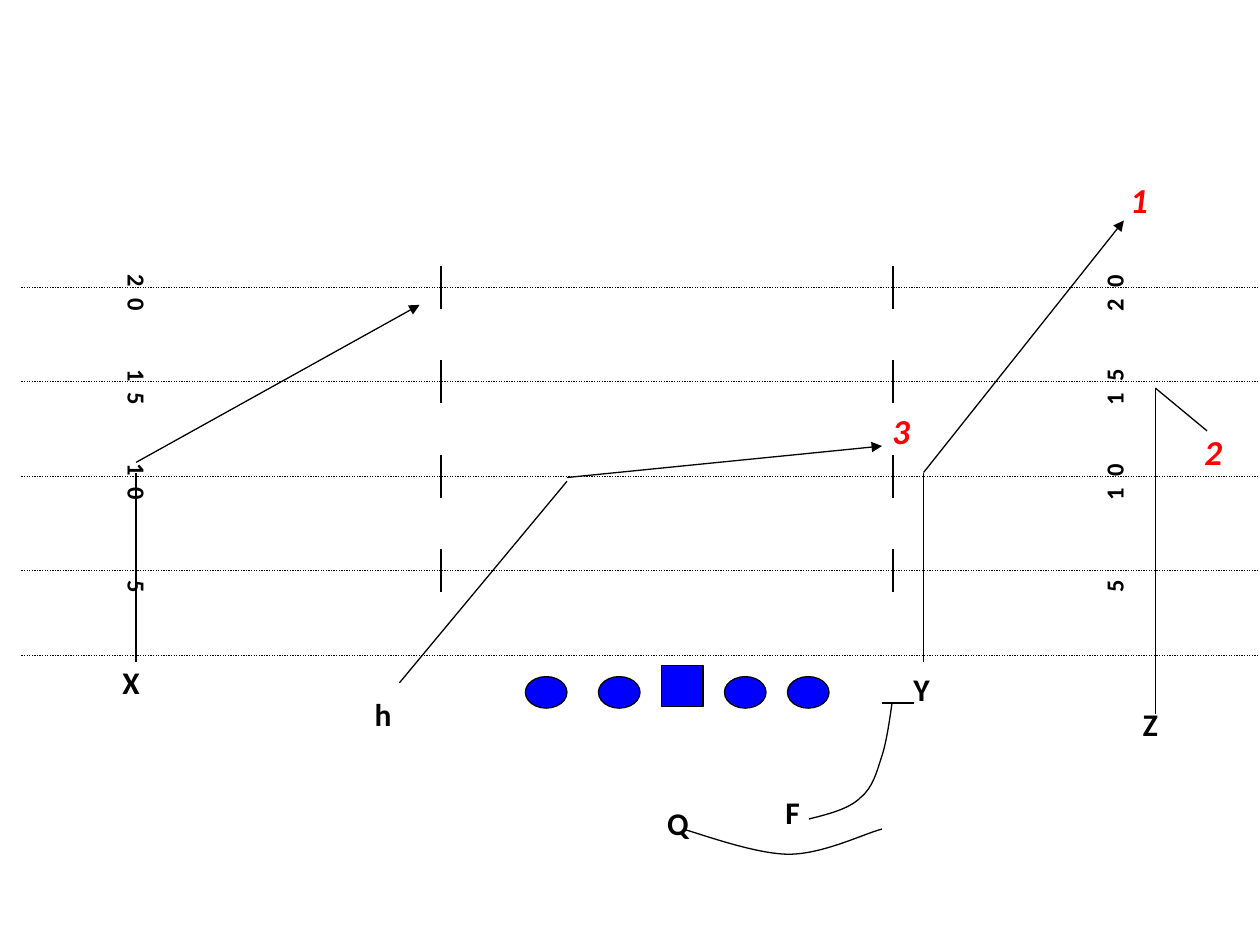
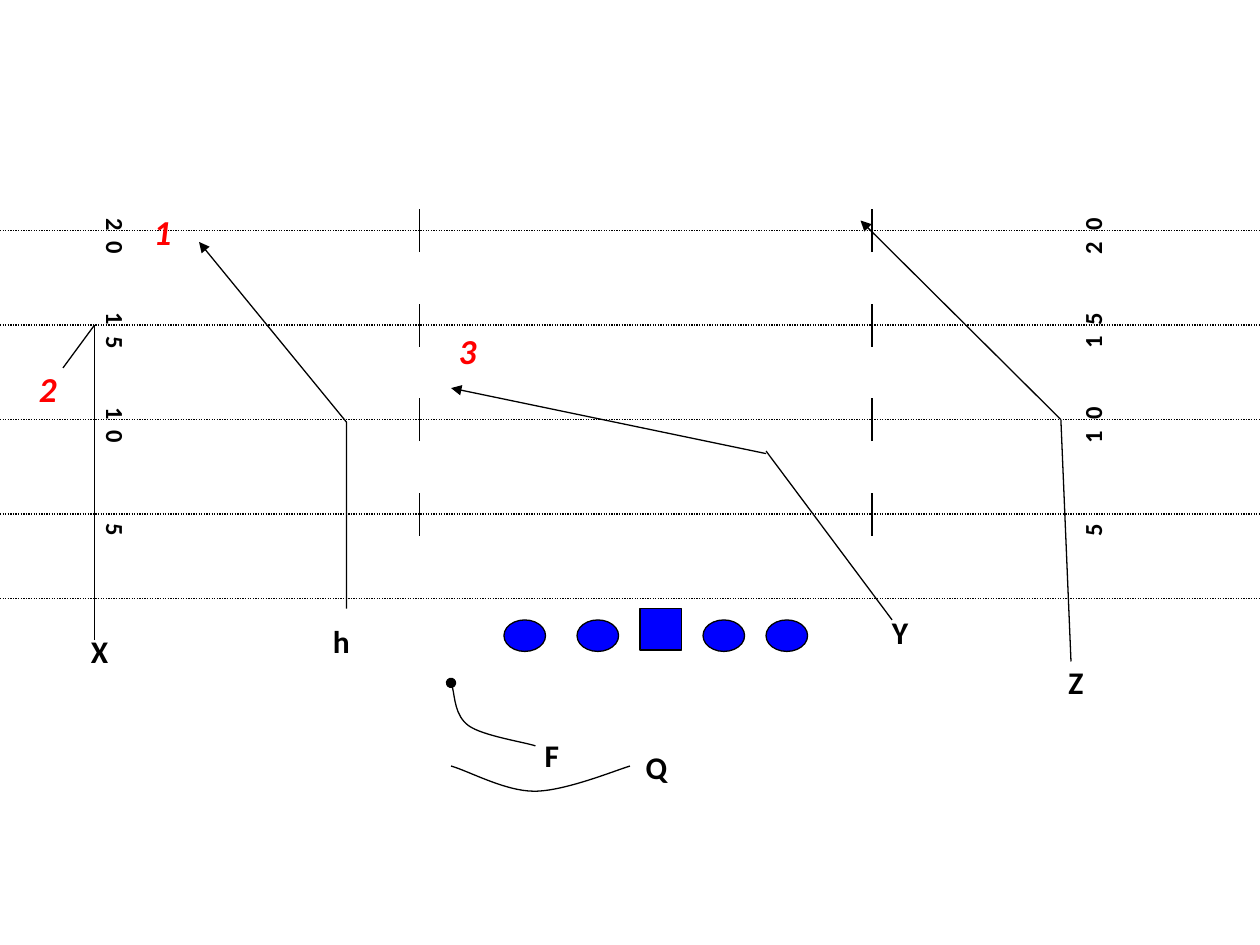
from pptx import Presentation
from pptx.dml.color import RGBColor
from pptx.enum.dml import MSO_LINE
from pptx.enum.shapes import MSO_CONNECTOR, MSO_SHAPE
from pptx.enum.text import MSO_ANCHOR, MSO_AUTO_SIZE, PP_ALIGN
from pptx.oxml.ns import qn
from pptx.util import Inches, Pt
from lxml.etree import SubElement

FONT = "Calibri"
BLACK, BLUE, RED = "000000", "0000FF", "FF0000"
LABEL_WIDTH, LABEL_HEIGHT = 0.42, 0.33
TICK_HALF = 0.17

# Field layout, measured from the left end of the field and the scrimmage line.
YARD_LINES = {"5": -0.67, "1 0": -1.42, "1 5": -2.17, "2 0": -2.92}
HASH_COLUMNS = (3.33, 6.92)
NUMBER_COLUMNS = ((0.71, 90), (8.46, 270))
LINEMEN = (4, 4.58, 5.58, 6.08)
CENTER = 5.08


def color(hex_string):
    return RGBColor.from_string(hex_string)


def write(text_frame, text, size=18, hex_color=BLACK, italic=False,
          align=PP_ALIGN.CENTER, spacing=0):
    """Write one bold line; spacing is extra letter spacing in hundredths of a point."""
    text_frame.word_wrap = False
    paragraph = text_frame.paragraphs[0]
    paragraph.alignment = align
    run = paragraph.add_run()
    run.text = text
    run.font.name = FONT
    run.font.size = Pt(size)
    run.font.bold = True
    run.font.italic = italic
    run.font.color.rgb = color(hex_color)
    if spacing:
        run._r.get_or_add_rPr().set("spc", str(spacing))


class PlayDiagram:
    """Draws one play on a blank slide; the field starts at left, scrimmage is its line."""

    def __init__(self, presentation, left, scrimmage):
        self.slide = presentation.slides.add_slide(presentation.slide_layouts[6])
        self.shapes = self.slide.shapes
        self.left = left
        self.scrimmage = scrimmage

    def stroke(self, shape, width=0.75, dash=None, end=None):
        """Style an outline; end names the mark at its last point."""
        shape.line.color.rgb = color(BLACK)
        shape.line.width = Pt(width)
        if dash:
            shape.line.dash_style = dash
        if end:
            SubElement(shape.line._get_or_add_ln(), qn("a:tailEnd"), type=end)

    def line(self, start, finish, **style):
        connector = self.shapes.add_connector(
            MSO_CONNECTOR.STRAIGHT, *map(Inches, (*start, *finish)))
        self.stroke(connector, **style)
        SubElement(connector._element.spPr, qn("a:effectLst"))

    def route(self, *points, end=None):
        """Join the points with straight lines and mark the last one."""
        last = len(points) - 2
        for index, (start, finish) in enumerate(zip(points, points[1:])):
            self.line(start, finish, end=end if index == last else None)

    def outline(self, *points, curved=False, end=None):
        """Draw an open path; if curved, each three points after the first form a Bézier."""
        start, *others = [tuple(map(Inches, point)) for point in points]
        builder = self.shapes.build_freeform(*start)
        builder.add_line_segments(others, close=False)
        shape = builder.convert_to_shape()
        shape.shadow.inherit = False
        shape.fill.background()
        self.stroke(shape, end=end)
        if curved:
            segments = list(shape._element.iter(qn("a:lnTo")))
            for index in range(0, len(segments), 3):
                curve = SubElement(segments[index].getparent(), qn("a:cubicBezTo"))
                for segment in segments[index:index + 3]:
                    curve.append(segment[0])
                    segment.getparent().remove(segment)

    def player(self, kind, left, top, height):
        shape = self.shapes.add_shape(
            kind, *map(Inches, (left, top, 0.33, height)))
        shape.shadow.inherit = False
        shape.fill.solid()
        shape.fill.fore_color.rgb = color(BLUE)
        self.stroke(shape)

    def label(self, text, left, top, rotation=0, **text_format):
        shape = self.shapes.add_shape(
            MSO_SHAPE.OVAL, *map(Inches, (left, top, LABEL_WIDTH, LABEL_HEIGHT)))
        shape.shadow.inherit = False
        shape.fill.background()
        shape.line.fill.background()
        shape.rotation = rotation
        shape.text_frame.vertical_anchor = MSO_ANCHOR.MIDDLE
        write(shape.text_frame, text, **text_format)

    def tight_end(self, left, top):
        box = self.shapes.add_textbox(*map(Inches, (left, top, 0.37, 0.4)))
        write(box.text_frame, "Y", align=PP_ALIGN.LEFT)
        box.text_frame.auto_size = MSO_AUTO_SIZE.SHAPE_TO_FIT_TEXT

    def reads(self, *places):
        """Number the quarterback's reads in order."""
        for number, place in enumerate(places, start=1):
            self.label(str(number), *place, size=20, hex_color=RED, italic=True)

    def offensive_line(self):
        for offset in LINEMEN:
            self.player(MSO_SHAPE.OVAL, self.left + offset, self.scrimmage + 0.17, 0.25)
        self.player(MSO_SHAPE.RECTANGLE, self.left + CENTER, self.scrimmage + 0.08, 0.33)

    def field(self):
        for offset in (0, *YARD_LINES.values()):
            y = self.scrimmage + offset
            self.line((self.left, y), (self.left + 10, y), dash=MSO_LINE.ROUND_DOT)
        for yards, offset in YARD_LINES.items():
            y = self.scrimmage + offset
            single = len(yards) == 1
            for column, rotation in NUMBER_COLUMNS:
                self.label(yards, self.left + column, y - (0.04 if single else 0.12),
                           rotation, size=14, spacing=0 if single else 160)
            for column in HASH_COLUMNS:
                x = self.left + column
                self.line((x, y + TICK_HALF), (x, y - TICK_HALF), width=1)

    def formation(self, players, tight_end):
        self.offensive_line()
        self.field()
        for name, place in players.items():
            self.label(name, *place)
        self.tight_end(*tight_end)


def draw_right_play(presentation):
    play = PlayDiagram(presentation, left=0.17, scrimmage=5.2)
    play.formation({"X": (0.83, 5.25), "F": (6.08, 6.28), "h": (2.83, 5.5),
                    "Q": (5.17, 6.37), "Z": (8.92, 5.58)}, tight_end=(7.15, 5.27))
    play.line((1.08, 5.25), (1.08, 3.75))
    play.line((1.08, 3.67), (3.33, 2.42), end="triangle")
    play.line((3.17, 5.42), (4.5, 3.82))
    play.line((4.5, 3.79), (7, 3.54), end="triangle")
    play.route((7.33, 5.25), (7.33, 3.75), (8.92, 1.75), end="triangle")
    play.route((9.17, 5.67), (9.17, 3.08), (9.58, 3.42))
    play.outline((6.42, 6.5), (6.58, 6.46), (6.74, 6.42), (6.83, 6.33),
                 (6.93, 6.25), (6.96, 6.12), (7, 6),
                 (7.04, 5.88), (7.07, 5.65), (7.08, 5.58), curved=True)
    play.line((7, 5.58), (7.25, 5.58))
    play.outline((5.42, 6.58), (5.56, 6.62), (6, 6.78), (6.26, 6.78),
                 (6.53, 6.78), (6.85, 6.62), (7, 6.58), curved=True)
    play.reads((8.83, 1.42), (9.42, 3.42), (6.94, 3.25))


def draw_left_play(presentation):
    play = PlayDiagram(presentation, left=0, scrimmage=4.75)
    play.formation({"h": (2.5, 4.92), "F": (4.17, 5.83), "X": (0.58, 5),
                    "Q": (5, 5.92), "Z": (8.33, 5.25)}, tight_end=(6.98, 4.82))
    play.outline((2.75, 4.83), (2.75, 3.35), (1.58, 1.92), end="triangle")
    play.outline((4.25, 5.92), (4.16, 5.89), (3.83, 5.84), (3.72, 5.76),
                 (3.61, 5.68), (3.61, 5.49), (3.58, 5.42), curved=True, end="oval")
    play.outline((5, 6.08), (4.87, 6.12), (4.48, 6.28), (4.24, 6.28),
                 (4.01, 6.28), (3.72, 6.12), (3.58, 6.08), curved=True)
    play.route((8.5, 5.25), (8.42, 3.33), (6.83, 1.75), end="triangle")
    play.line((7.08, 4.92), (6.08, 3.58))
    play.line((6.08, 3.6), (3.58, 3.08), end="triangle")
    play.route((0.75, 5.08), (0.75, 2.58), (0.5, 2.92))
    play.reads((1.08, 1.67), (0.17, 2.92), (3.5, 2.62))


def main():
    presentation = Presentation()
    presentation.slide_width = Inches(10)
    presentation.slide_height = Inches(7.5)
    draw_right_play(presentation)
    draw_left_play(presentation)
    presentation.save("out.pptx")


if __name__ == "__main__":
    main()
